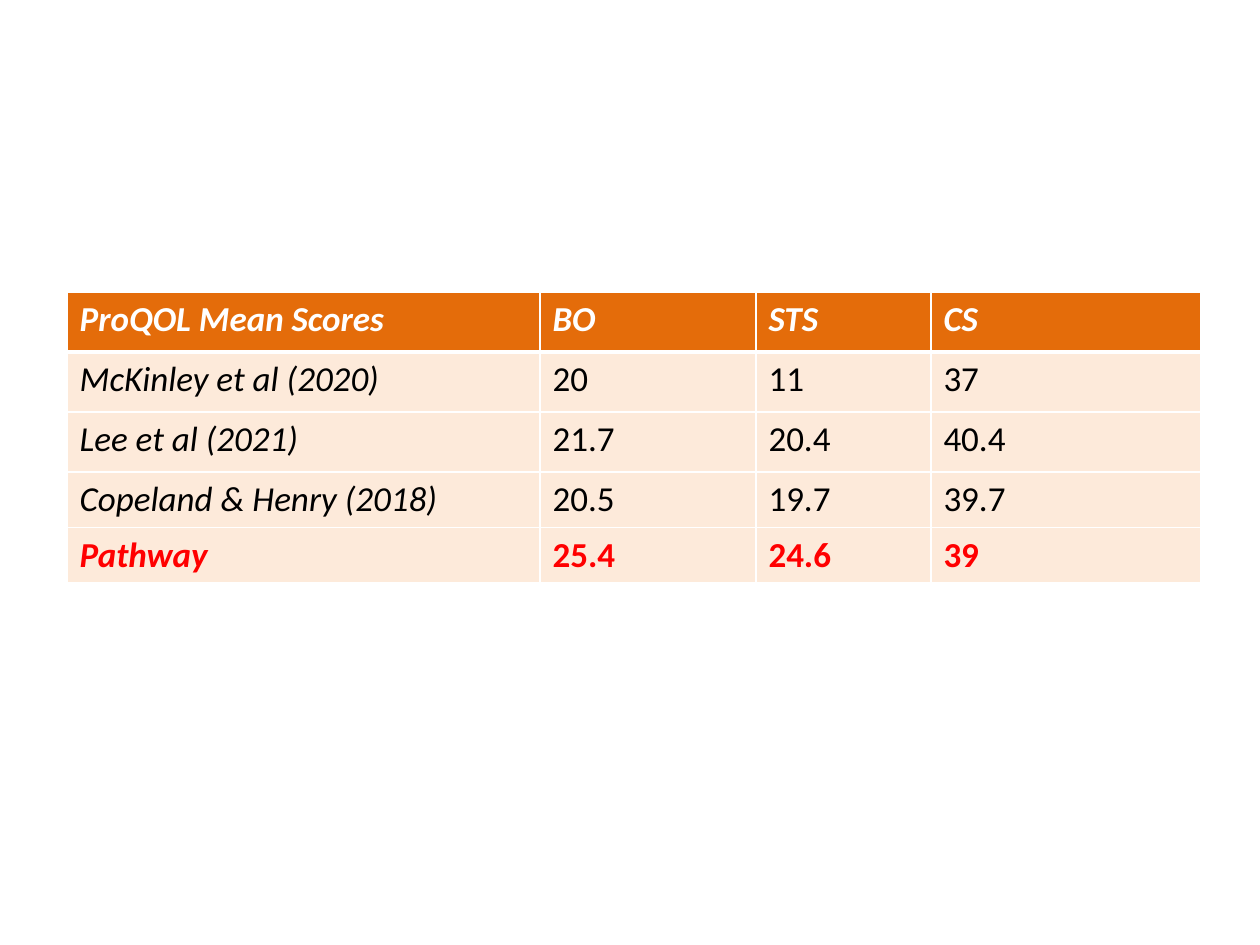
from lxml import etree
from pptx import Presentation
from pptx.dml.color import RGBColor
from pptx.oxml.ns import qn
from pptx.util import Pt

EMU_PER_PX = 914400 // 126
BLANK_LAYOUT = 6
COLORS = {
    "header": "E46C0A",
    "body": "FDEADA",
    "border": "FFFFFF",
    "header_text": "FFFFFF",
    "text": "000000",
    "highlight": "FF0000",
}
SCORES = [
    ("ProQOL Mean Scores", "BO", "STS", "CS"),
    ("McKinley et al (2020)", "20", "11", "37"),
    ("Lee et al (2021)", "21.7", "20.4", "40.4"),
    ("Copeland & Henry (2018)", "20.5", "19.7", "39.7"),
    ("Pathway", "25.4", "24.6", "39"),
]
COLUMN_WIDTHS = [473, 216, 175, 270]
ROW_HEIGHTS = [60, 60, 60, 50, 52]


def px(value):
    return value * EMU_PER_PX


def rgb(name):
    return RGBColor.from_string(COLORS[name])


class SlideBuilder:
    font = "Calibri"
    size = 20

    def __init__(self, page):
        self.page = page

    def border(self, cell, side, points):
        properties = cell._tc.get_or_add_tcPr()
        line = etree.SubElement(properties, qn(f"a:ln{side}"), w=str(Pt(points)))
        fill = etree.SubElement(line, qn("a:solidFill"))
        etree.SubElement(fill, qn("a:srgbClr"), val=COLORS["border"])

    def cell(self, cell, text, fill, color, bold, italic, top, bottom):
        for side, points in (("L", 1), ("R", 1), ("T", top), ("B", bottom)):
            self.border(cell, side, points)
        cell.fill.solid()
        cell.fill.fore_color.rgb = rgb(fill)
        span = cell.text_frame.paragraphs[0].add_run()
        span.text = text
        span.font.name = self.font
        span.font.size = Pt(self.size)
        span.font.bold = bold
        span.font.italic = italic
        span.font.color.rgb = rgb(color)

    def table(self, left, top, widths, heights, rows):
        table = self.page.shapes.add_table(
            len(rows), len(widths), px(left), px(top),
            px(sum(widths)), px(sum(heights)),
        ).table
        for column, width in zip(table.columns, widths):
            column.width = px(width)
        for row, height in zip(table.rows, heights):
            row.height = px(height)
        last = len(rows) - 1
        for r, values in enumerate(rows):
            header = r == 0
            color = "header_text" if header else "highlight" if r == last else "text"
            for c, text in enumerate(values):
                self.cell(
                    table.cell(r, c), text,
                    fill="header" if header else "body",
                    color=color,
                    bold=r in (0, last),
                    italic=header or c == 0,
                    top=3 if r == 1 else 1,
                    bottom=3 if header else 1,
                )


def main():
    deck = Presentation()
    deck.slide_width = px(1260)
    deck.slide_height = px(945)
    page = deck.slides.add_slide(deck.slide_layouts[BLANK_LAYOUT])
    builder = SlideBuilder(page)
    builder.table(67, 292, COLUMN_WIDTHS, ROW_HEIGHTS, SCORES)
    deck.save("out.pptx")


if __name__ == "__main__":
    main()
